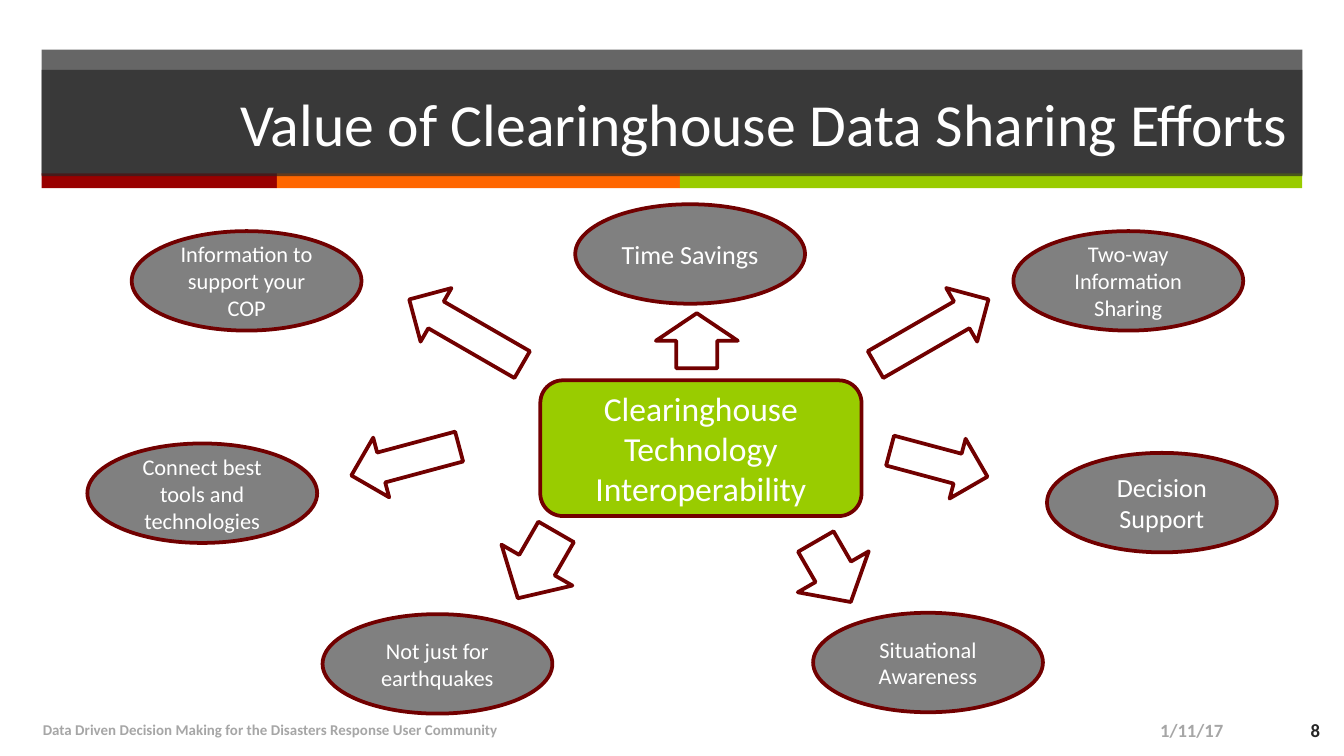
import pptx
import pptx.dml.color
import pptx.enum.shapes
import pptx.enum.text
import pptx.oxml.ns
import pptx.util
from lxml import etree
from pptx.util import Inches

SHAPE = pptx.enum.shapes.MSO_SHAPE
ALIGN = pptx.enum.text.PP_ALIGN
MIDDLE = pptx.enum.text.MSO_ANCHOR.MIDDLE

WHITE, DARK, GRAY, PALE = "FFFFFF", "262626", "808080", "A6A6A6"
RED, ORANGE, GREEN = "990000", "FF6600", "99CC00"
OUTLINE, HUB_OUTLINE = "710000", "730000"

BAND_LEFT = 0.31
STRIPES = [(1.75, RED), (3, ORANGE), (4.63, GREEN)]
BENEFIT_SIZE = (1.71, 0.74)
BENEFITS = [  # left, top, font size, text
    (7.54, 1.72, 12, "Two-way Information Sharing"),
    (7.79, 3.37, 14, "Decision Support"),
    (2.4, 4.57, 12, "Not just for earthquakes"),
    (0.65, 3.3, 12, "Connect best tools and technologies"),
    (0.98, 1.72, 12, "Information to support your COP"),
    (4.28, 1.52, 14, "Time Savings"),
    (6.05, 4.56, 12, "Situational Awareness"),
]
ARROWS = [  # position and size before rotation, then degrees
    ((3.71, 3.9, 0.57, 0.61), 120),
    ((2.6, 3.2, 0.83, 0.46), 165),
    ((5.94, 3.95, 0.52, 0.61), 60),
    ((4.98, 2.23, 0.41, 0.61), 270),
    ((2.98, 2.24, 0.97, 0.46), 210),
    ((6.45, 2.24, 0.97, 0.46), 330),
    ((6.61, 3.22, 0.75, 0.46), 15),
]
FOOTERS = [  # position and size, text, font size, colour, alignment
    ((9.23, 5.28, 0.69, 0.3), "8", 10, DARK, ALIGN.RIGHT),
    ((0.22, 5.28, 6.7, 0.3),
     "Data Driven Decision Making for the Disasters Response User Community",
     8, PALE, ALIGN.LEFT),
    ((6.87, 5.28, 2.33, 0.3), "1/11/17", 10, PALE, ALIGN.RIGHT),
]


def rgb(color):
    return pptx.dml.color.RGBColor.from_string(color)


def fill_shape(shape, color, opacity=100):
    shape.fill.solid()
    shape.fill.fore_color.rgb = rgb(color)
    if opacity < 100:
        color_tag = shape.fill._xPr.find(".//" + pptx.oxml.ns.qn("a:srgbClr"))
        alpha = etree.SubElement(color_tag, pptx.oxml.ns.qn("a:alpha"))
        alpha.set("val", str(opacity * 1000))


def add_preset(page, kind, box, fill=None, line=None, opacity=100):
    shape = page.shapes.add_shape(kind, *map(Inches, box))
    shape.shadow.inherit = False
    if fill:
        fill_shape(shape, fill, opacity)
    else:
        shape.fill.background()
    if line:
        shape.line.color.rgb = rgb(line)
        shape.line.width = pptx.util.Pt(2)
    else:
        shape.line.fill.background()
    return shape


def write_text(shape, text, size, color, align, bold=False, insets=(0.1, 0.05)):
    frame = shape.text_frame
    frame.text = text
    frame.word_wrap = True
    frame.auto_size = pptx.enum.text.MSO_AUTO_SIZE.NONE
    frame.vertical_anchor = MIDDLE
    frame.margin_left = frame.margin_right = Inches(insets[0])
    frame.margin_top = frame.margin_bottom = Inches(insets[1])
    para = frame.paragraphs[0]
    para.alignment = align
    para.font.name = "Calibri"
    para.font.size = pptx.util.Pt(size)
    para.font.bold = bold
    para.font.color.rgb = rgb(color)


def add_label(page, kind, box, fill, line, text, size):
    shape = add_preset(page, kind, box, fill, line)
    write_text(shape, text, size, WHITE, ALIGN.CENTER, insets=(0.09, 0.04))


def add_header(page):
    add_preset(page, SHAPE.RECTANGLE, (BAND_LEFT, 0.37, 9.38, 0.93), DARK, opacity=70)
    left = BAND_LEFT
    for width, color in STRIPES:
        add_preset(page, SHAPE.RECTANGLE, (left, 1.29, width, 0.11), color)
        left += width


def place_title(page, text):
    """Set the title and bring it in front of the translucent band."""
    title = page.shapes.title
    title.left, title.top, title.width, title.height = map(
        Inches, (BAND_LEFT, 0.52, 9.38, 0.79))
    fill_shape(title, DARK, opacity=70)
    write_text(title, text, 32, WHITE, ALIGN.RIGHT)
    page.shapes._spTree.append(title._element)


def add_arrow(page, box, degrees):
    add_preset(page, SHAPE.RIGHT_ARROW, box, line=OUTLINE).rotation = degrees


def add_footer(page, box, text, size, color, align):
    shape = page.shapes.add_textbox(*map(Inches, box))
    write_text(shape, text, size, color, align, bold=True)


def main():
    deck = pptx.Presentation()
    deck.slide_width = Inches(10)
    deck.slide_height = deck.slide_width * 9 // 16
    page = deck.slides.add_slide(deck.slide_layouts.get_by_name("Title Only"))
    add_header(page)
    place_title(page, "Value of Clearinghouse Data Sharing Efforts")
    add_label(page, SHAPE.ROUNDED_RECTANGLE, (4.02, 2.83, 2.39, 1.01), GREEN,
              HUB_OUTLINE, "Clearinghouse Technology Interoperability", 18)
    for left, top, size, text in BENEFITS:
        add_label(page, SHAPE.OVAL, (left, top, *BENEFIT_SIZE), GRAY, OUTLINE, text, size)
    for box, degrees in ARROWS:
        add_arrow(page, box, degrees)
    for footer in FOOTERS:
        add_footer(page, *footer)
    deck.save("out.pptx")


if __name__ == "__main__":
    main()
